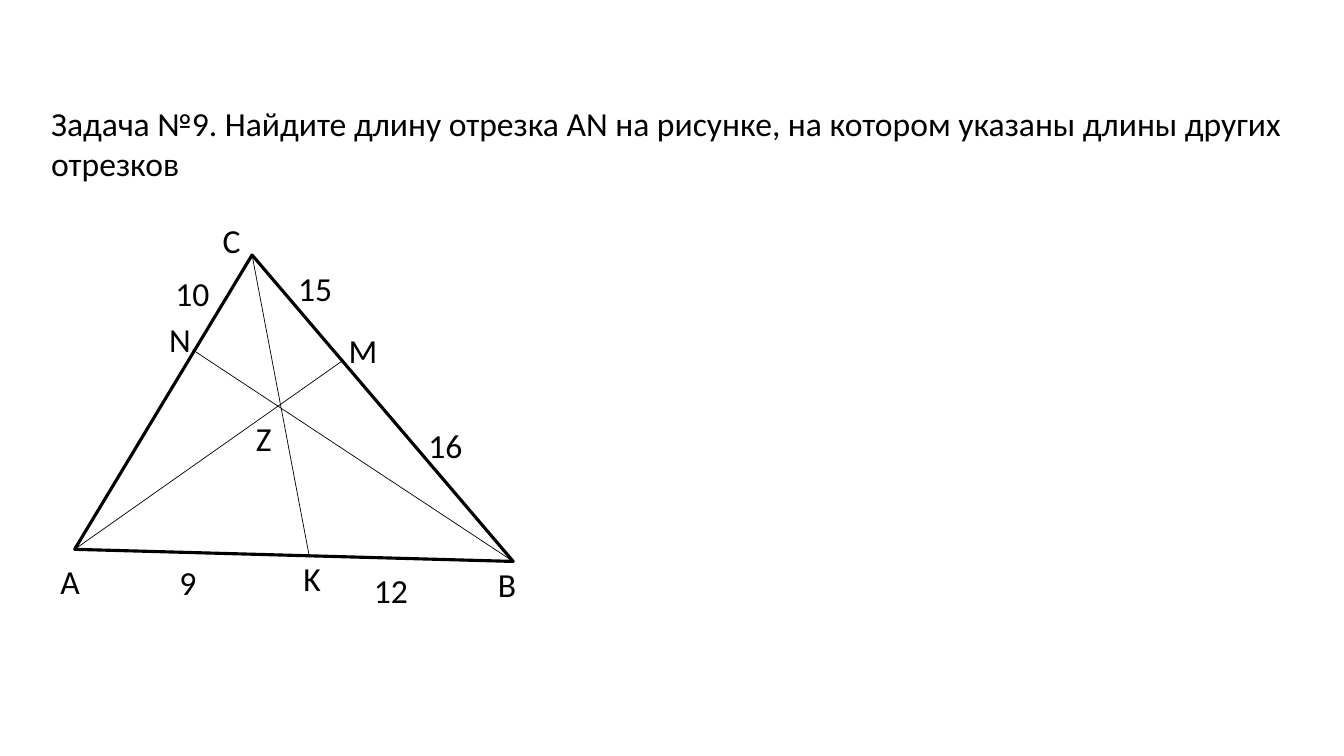
from dataclasses import dataclass

from lxml.etree import SubElement
from pptx import Presentation
from pptx.dml.color import RGBColor
from pptx.enum.shapes import MSO_CONNECTOR
from pptx.enum.text import MSO_AUTO_SIZE
from pptx.oxml.ns import qn
from pptx.slide import Slide
from pptx.util import Inches, Pt

COLOURS = {"ink": "000000", "page": "FFFFFF"}
INK = RGBColor.from_string(COLOURS["ink"])
LABEL_HEIGHT = 0.5


@dataclass(frozen=True)
class Point:
    x: float
    y: float


@dataclass(frozen=True)
class Label:
    text: str
    left: float
    top: float
    width: float = 0.4
    height: float = LABEL_HEIGHT


A, B, C = Point(0.74, 5.45), Point(5.09, 5.57), Point(2.5, 2.53)
M, K, N = Point(3.41, 3.57), Point(3.07, 5.53), Point(1.91, 3.47)
CEVIANS = [(A, M), (C, K), (B, N)]

TASK = Label(
    "Задача №9. Найдите длину отрезка AN на рисунке, "
    "на котором указаны длины других отрезков",
    0.41, 0.97, 12.57, 0.91,
)
POINT_NAMES = [
    Label("А", 0.5, 5.52),
    Label("В", 4.84, 5.55),
    Label("С", 2.11, 2.13),
    Label("N", 1.58, 3.11),
    Label("M", 3.36, 3.22),
    Label("K", 2.91, 5.49),
    Label("Z", 2.44, 4.1),
]
SEGMENT_LENGTHS = [
    Label("10", 1.64, 2.66, 0.66),
    Label("15", 2.86, 2.61, 0.66),
    Label("16", 4.15, 4.17, 0.66),
    Label("12", 3.61, 5.6, 0.66),
    Label("9", 1.68, 5.53, 0.44),
]


def add_label(page: Slide, label: Label) -> None:
    box = page.shapes.add_textbox(
        Inches(label.left), Inches(label.top),
        Inches(label.width), Inches(label.height),
    )
    frame = box.text_frame
    frame.word_wrap = True
    frame.auto_size = MSO_AUTO_SIZE.SHAPE_TO_FIT_TEXT
    para = frame.paragraphs[0]
    para.text = label.text
    para.font.name = "Calibri"
    para.font.size = Pt(24)
    para.font.color.rgb = INK


def add_triangle(page: Slide, first: Point, *others: Point) -> None:
    builder = page.shapes.build_freeform(Inches(first.x), Inches(first.y))
    builder.add_line_segments(
        [(Inches(point.x), Inches(point.y)) for point in others], close=True
    )
    triangle = builder.convert_to_shape()
    triangle.shadow.inherit = False
    triangle.fill.background()
    triangle.line.color.rgb = INK
    triangle.line.width = Pt(2.25)


def add_cevian(page: Slide, vertex: Point, foot: Point) -> None:
    """Draw a thin line from a vertex to a point on the opposite side."""
    line = page.shapes.add_connector(
        MSO_CONNECTOR.STRAIGHT,
        Inches(vertex.x), Inches(vertex.y), Inches(foot.x), Inches(foot.y),
    )
    line.line.color.rgb = INK
    line.line.width = Pt(0.5)
    SubElement(line._element.spPr, qn("a:effectLst"))


def main() -> None:
    deck = Presentation()
    deck.slide_width, deck.slide_height = Inches(13.33), Inches(7.5)
    page = deck.slides.add_slide(deck.slide_layouts[6])
    page.background.fill.solid()
    page.background.fill.fore_color.rgb = RGBColor.from_string(COLOURS["page"])

    add_label(page, TASK)
    add_triangle(page, A, C, B)
    for vertex, foot in CEVIANS:
        add_cevian(page, vertex, foot)
    for label in POINT_NAMES + SEGMENT_LENGTHS:
        add_label(page, label)
    deck.save("out.pptx")


if __name__ == "__main__":
    main()
